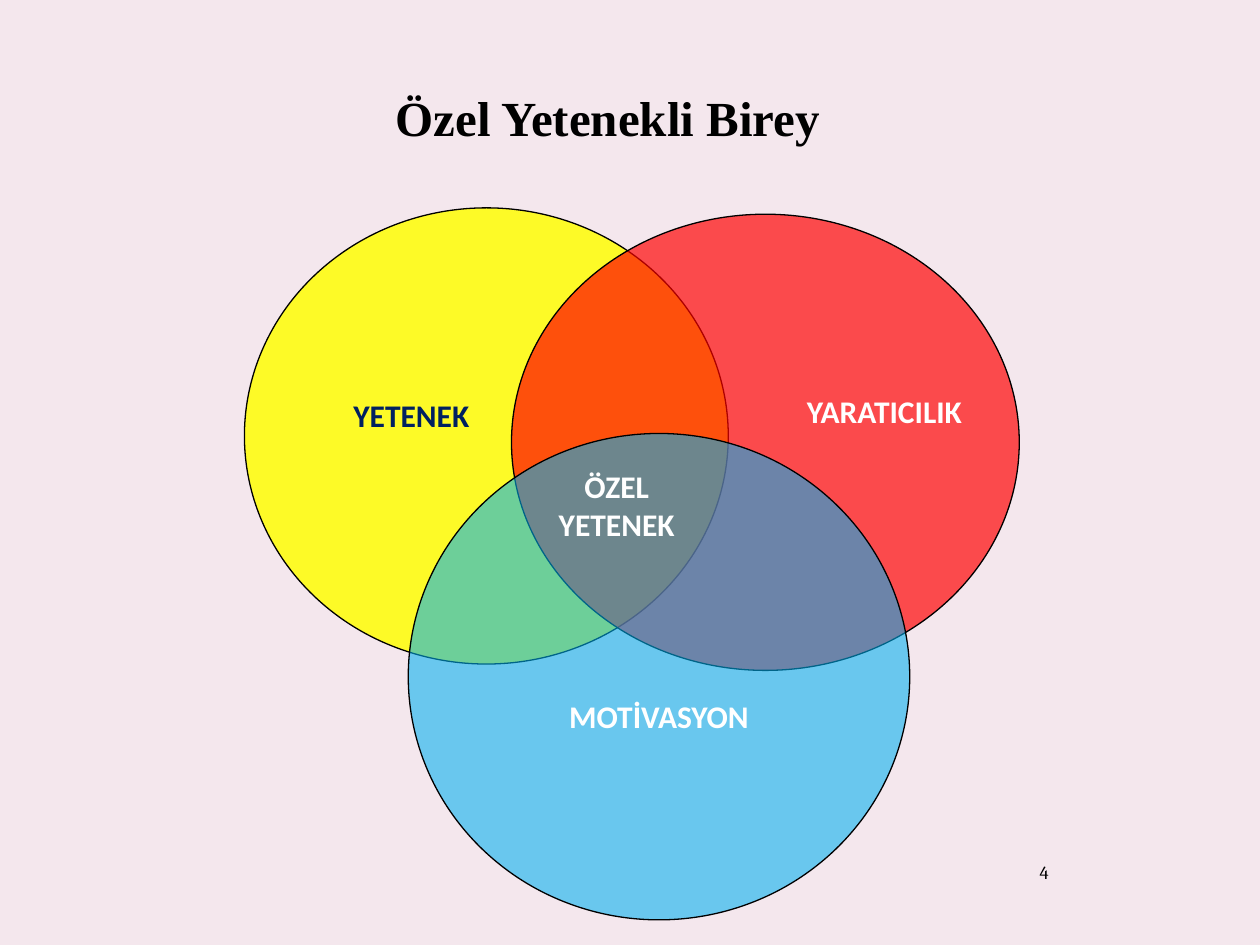
import pptx
import pptx.util
import pptx.dml.color
import pptx.enum.shapes
import pptx.enum.text
import pptx.oxml.ns
from lxml import etree

WIDTH = pptx.util.Inches(10)
HEIGHT = pptx.util.Inches(7.5)
ALIGN = pptx.enum.text.PP_ALIGN
ANCHOR = pptx.enum.text.MSO_ANCHOR


def color(value):
    return pptx.dml.color.RGBColor.from_string(value)


def area(left, top, width, height):
    return [int(side * percent / 100) for side, percent in
            zip((WIDTH, HEIGHT, WIDTH, HEIGHT), (left, top, width, height))]


def write(shape, text, font_name, size, text_color, bold, align, anchor):
    frame = shape.text_frame
    frame.text = text
    frame.vertical_anchor = anchor
    for paragraph in frame.paragraphs:
        paragraph.alignment = align
        paragraph.font.name = font_name
        paragraph.font.size = pptx.util.Pt(size)
        paragraph.font.bold = bold
        paragraph.font.color.rgb = color(text_color)


def add_title(slide, text):
    title = slide.shapes.title
    title.left, title.top, title.width, title.height = area(0, 4, 96.5, 16.67)
    write(title, text, "Times New Roman", 28, "000000", True, ALIGN.CENTER, ANCHOR.MIDDLE)


def add_circle(slide, place, fill, opacity):
    circle = slide.shapes.add_shape(pptx.enum.shapes.MSO_SHAPE.OVAL, *area(*place))
    circle.shadow.inherit = False
    circle.fill.solid()
    circle.fill.fore_color.rgb = color(fill)
    fill_color = circle.fill._xPr.find(".//" + pptx.oxml.ns.qn("a:srgbClr"))
    etree.SubElement(fill_color, pptx.oxml.ns.qn("a:alpha"), val=str(opacity * 1000))
    circle.line.color.rgb = color("000000")
    circle.line.width = pptx.util.Pt(0.75)


def add_label(slide, place, text, text_color):
    label = slide.shapes.add_textbox(*area(*place))
    label.text_frame.word_wrap = False
    label.text_frame.auto_size = pptx.enum.text.MSO_AUTO_SIZE.SHAPE_TO_FIT_TEXT
    write(label, text, "Calibri", 18, text_color, True, ALIGN.CENTER, ANCHOR.TOP)


def add_page_number(slide, number):
    box = slide.shapes.add_textbox(*area(53.3, 91.87, 30.9, 2.27))
    box.text_frame.word_wrap = True
    write(box, number, "Cambria", 10.5, "000000", False, ALIGN.RIGHT, ANCHOR.BOTTOM)


def main():
    presentation = pptx.Presentation()
    presentation.slide_width = WIDTH
    presentation.slide_height = HEIGHT
    slide = presentation.slides.add_slide(presentation.slide_layouts[5])
    slide.background.fill.solid()
    slide.background.fill.fore_color.rgb = color("F4E7ED")

    circles = [
        ((19.4, 22, 38.4, 48.27), "FFFF00", 83),
        ((40.6, 22.67, 40.3, 48.27), "FF0000", 68),
        ((32.4, 45.87, 39.8, 51.47), "00B0F0", 57),
    ]
    labels = [
        ((25, 41.2, 15.3, 5.33), "YETENEK", "002060"),
        ((60, 40.8, 20.4, 5.33), "YARATICILIK", "FFFFFF"),
        ((41.8, 73.07, 21, 5.33), "MOTİVASYON", "FFFFFF"),
        ((41.3, 48.8, 15.3, 9.47), "ÖZEL\nYETENEK", "FFFFFF"),
    ]
    for circle in circles:
        add_circle(slide, *circle)
    add_title(slide, "Özel Yetenekli Birey")
    add_page_number(slide, "4")
    for label in labels:
        add_label(slide, *label)
    presentation.save("out.pptx")


if __name__ == "__main__":
    main()
